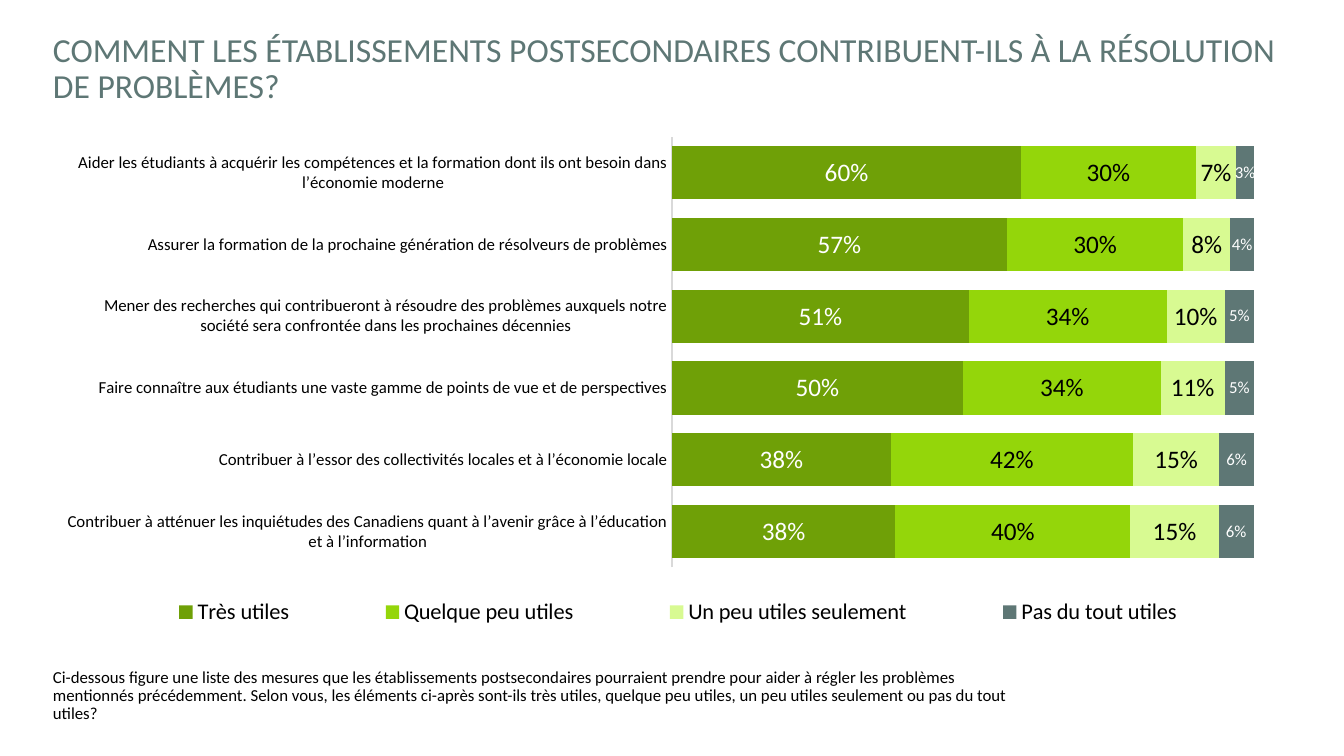
from pptx import Presentation
from pptx.chart.data import CategoryChartData
from pptx.dml.color import RGBColor
from pptx.enum.chart import XL_CHART_TYPE, XL_LEGEND_POSITION, XL_TICK_MARK
from pptx.enum.text import MSO_ANCHOR
from pptx.oxml import parse_xml
from pptx.oxml.ns import nsdecls, qn
from pptx.util import Inches, Pt

WIDE, HIGH = 13.33, 7.5
FONT = "Calibri"
BLACK, WHITE, SLATE = "000000", "FFFFFF", "5E7775"

TITLE = ("COMMENT LES ÉTABLISSEMENTS POSTSECONDAIRES CONTRIBUENT-ILS "
         "À LA RÉSOLUTION DE PROBLÈMES?")
NOTE = ("Ci-dessous figure une liste des mesures que les établissements postsecondaires "
        "pourraient prendre pour aider à régler les problèmes mentionnés précédemment. "
        "Selon vous, les éléments ci-après sont-ils très utiles, quelque peu utiles, "
        "un peu utiles seulement ou pas du tout utiles?")
ACTIONS = [
    "Aider les étudiants à acquérir les compétences et la formation dont ils ont besoin "
    "dans l’économie moderne",
    "Assurer la formation de la prochaine génération de résolveurs de problèmes",
    "Mener des recherches qui contribueront à résoudre des problèmes auxquels notre "
    "société sera confrontée dans les prochaines décennies",
    "Faire connaître aux étudiants une vaste gamme de points de vue et de perspectives",
    "Contribuer à l’essor des collectivités locales et à l’économie locale",
    "Contribuer à atténuer les inquiétudes des Canadiens quant à l’avenir grâce à "
    "l’éducation et à l’information",
]
# name, values, fill, label colour, label size
ANSWERS = [
    ("Très utiles", (0.6, 0.57, 0.51, 0.5, 0.38, 0.38), "6FA007", WHITE, 18),
    ("Quelque peu utiles", (0.3, 0.3, 0.34, 0.34, 0.42, 0.4), "94D60A", BLACK, 18),
    ("Un peu utiles seulement", (0.07, 0.08, 0.1, 0.11, 0.15, 0.15), "D8FA92", BLACK, 18),
    ("Pas du tout utiles", (0.03, 0.04, 0.05, 0.05, 0.06, 0.06), SLATE, WHITE, 12),
]


def paint(color, hue):
    color.rgb = RGBColor.from_string(hue)


def style(font, size, hue):
    font.name, font.size = FONT, Pt(size)
    paint(font.color, hue)


def frame(left, top, width, height):
    """Turn shares of the slide into lengths."""
    return (Inches(left * WIDE), Inches(top * HIGH),
            Inches(width * WIDE), Inches(height * HIGH))


def add_text(slide, box, text, size, hue):
    body = slide.shapes.add_textbox(*frame(*box)).text_frame
    body.word_wrap = True
    body.vertical_anchor = MSO_ANCHOR.MIDDLE
    body.text = text
    line = body.paragraphs[0]
    line.line_spacing = 0.9
    style(line.runs[0].font, size, hue)


def pin(part, index, box, target=""):
    """Fix a chart part at shares of the chart's size."""
    for old in part.findall(qn("c:layout")):
        part.remove(old)
    sides = "".join(f'<c:{key} val="{share}"/>' for key, share in zip("xywh", box))
    part.insert(index, parse_xml(
        f'<c:layout {nsdecls("c")}><c:manualLayout>{target}'
        f'<c:xMode val="edge"/><c:yMode val="edge"/>{sides}'
        '</c:manualLayout></c:layout>'))


def style_axes(chart):
    axis = chart.category_axis
    axis.reverse_order = True
    axis.major_tick_mark = axis.minor_tick_mark = XL_TICK_MARK.NONE
    axis.format.line.width = Pt(0.75)
    paint(axis.format.line.color, "D9D9D9")
    style(axis.tick_labels.font, 12, BLACK)
    scale = chart.value_axis
    scale.visible = False
    scale.has_major_gridlines = False
    scale.minimum_scale, scale.maximum_scale = 0, 1


def style_bars(plot):
    plot.gap_width, plot.overlap = 35, 100
    plot.vary_by_categories = False
    for bars, (_, _, fill, ink, size) in zip(plot.series, ANSWERS):
        bars.format.fill.solid()
        paint(bars.format.fill.fore_color, fill)
        labels = bars.data_labels
        labels.show_value = True
        labels.number_format = "0%"
        labels.number_format_is_linked = False
        style(labels.font, size, ink)


def add_legend(chart):
    chart.has_legend = True
    legend = chart.legend
    legend.position = XL_LEGEND_POSITION.BOTTOM
    legend.include_in_layout = False
    style(legend.font, 16, BLACK)
    pin(legend._element, 1, (0.02, 0.89, 0.97, 0.09))


def add_bars(slide, box):
    data = CategoryChartData(number_format="0%")
    data.categories = ACTIONS
    for name, values, *_ in ANSWERS:
        data.add_series(name, values)
    chart = slide.shapes.add_chart(
        XL_CHART_TYPE.BAR_STACKED_100, *frame(*box), data).chart
    chart.has_title = False
    style(chart.font, 18, BLACK)
    style_axes(chart)
    style_bars(chart.plots[0])
    add_legend(chart)
    area = chart._chartSpace.chart.plotArea
    pin(area, 0, (0.5, 0.03, 0.48, 0.82), '<c:layoutTarget val="inner"/>')


def main():
    deck = Presentation()
    deck.slide_width, deck.slide_height = Inches(WIDE), Inches(HIGH)
    slide = deck.slides.add_slide(deck.slide_layouts[6])
    add_text(slide, (0.032, 0.024, 0.954, 0.136), TITLE, 24, SLATE)
    add_text(slide, (0.032, 0.853, 0.748, 0.136), NOTE, 12, BLACK)
    add_bars(slide, (0.049, 0.16, 0.902, 0.695))
    deck.save("out.pptx")


if __name__ == "__main__":
    main()
